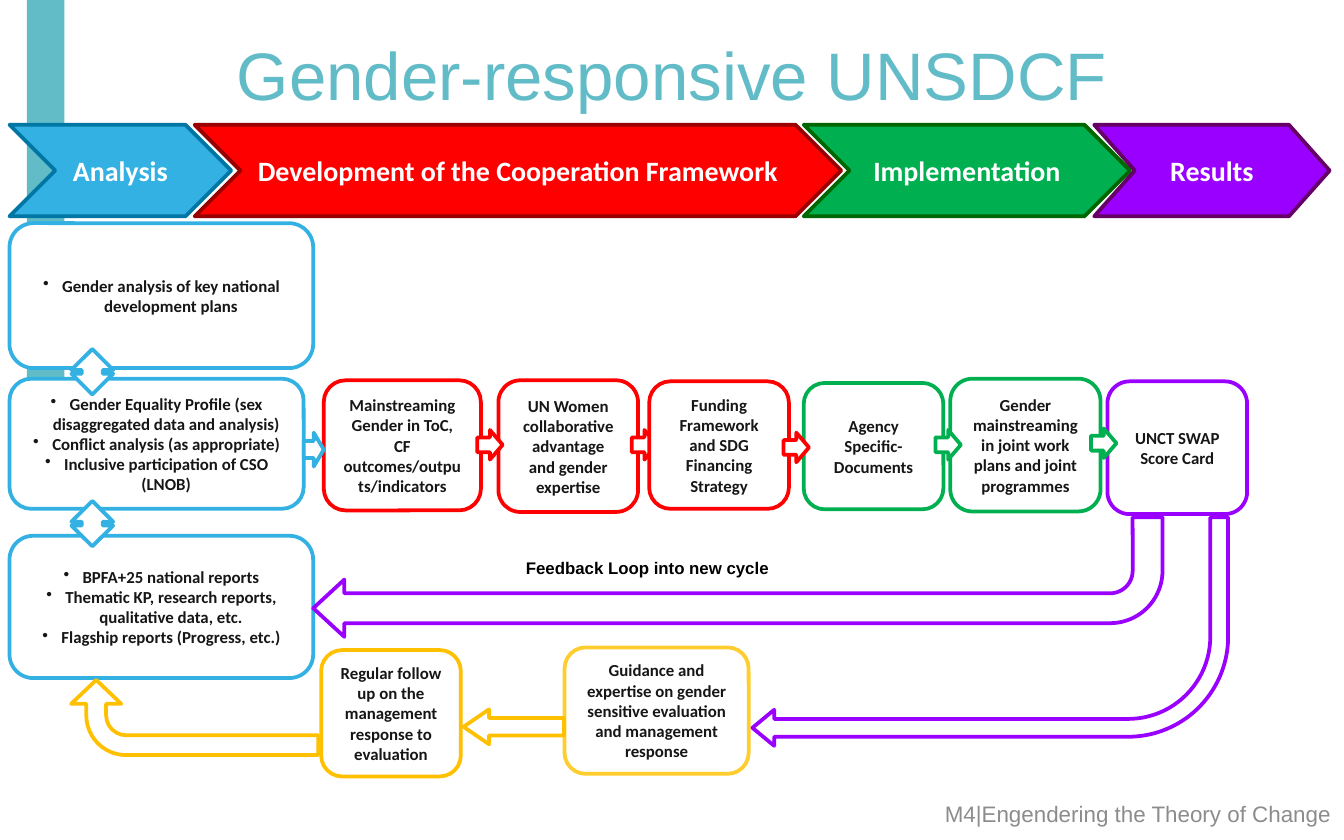
from dataclasses import dataclass

from lxml.etree import SubElement
from pptx import Presentation
from pptx.dml.color import RGBColor
from pptx.enum.shapes import MSO_AUTO_SHAPE_TYPE as Shape
from pptx.enum.text import MSO_VERTICAL_ANCHOR as Anchor, PP_PARAGRAPH_ALIGNMENT as Align
from pptx.oxml.ns import qn
from pptx.util import Cm, Pt


@dataclass(frozen=True)
class Theme:
    """Colours, fonts and sizes of the slide."""
    teal: str = "62BCC8"
    blue: str = "33B1E3"
    navy: str = "0076A5"
    red: str = "FF0000"
    maroon: str = "990000"
    green: str = "00B050"
    forest: str = "006600"
    purple: str = "9900FF"
    plum: str = "660066"
    amber: str = "FFC000"
    gold: str = "FFCD2D"
    white: str = "FFFFFF"
    black: str = "000000"
    ink: str = "161616"
    grey: str = "8C8C8C"
    heading_font: str = "Arial"
    body_font: str = "Calibri"
    title_size: float = 36
    phase_size: float = 15
    footer_size: float = 12
    body_size: float = 9
    line_width: float = 2


THEME = Theme()

PHASES = [
    ("Analysis", 0.18, 4.19, THEME.blue, THEME.navy, 0.5),
    ("Development of the Cooperation Framework", 3.68, 12.22, THEME.red, THEME.maroon, 0.5),
    ("Implementation", 15.19, 6.17, THEME.green, THEME.forest, 0.5),
    ("Results", 20.68, 4.45, THEME.purple, THEME.plum, 0.444),
]

ANALYSES = [
    ((0.18, 4.22, 5.74, 2.74), ["Gender analysis of key national development plans"]),
    ((0.18, 7.16, 5.56, 2.46), [
        "Gender Equality Profile (sex disaggregated data and analysis)",
        "Conflict analysis (as appropriate)",
        "Inclusive participation of CSO (LNOB)",
    ]),
    ((0.18, 10.13, 5.74, 2.69), [
        "BPFA+25 national reports",
        "Thematic KP, research reports, qualitative data, etc.",
        "Flagship reports (Progress, etc.)",
    ]),
]

STEPS = [
    ("Mainstreaming Gender in ToC, CF outcomes/outputs/indicators",
     (6.12, 7.19, 2.97, 2.46), THEME.red),
    ("UN Women collaborative advantage and gender expertise",
     (9.42, 7.19, 2.64, 2.49), THEME.red),
    ("Agency Specific-Documents", (15.19, 7.24, 2.64, 2.39), THEME.green),
    ("Gender mainstreaming in joint work plans and joint programmes",
     (17.96, 7.16, 2.84, 2.51), THEME.green),
    ("UNCT SWAP Score Card", (20.93, 7.21, 2.64, 2.51), THEME.purple),
    ("Regular follow up on the management response to evaluation",
     (6.07, 12.29, 2.64, 2.39), THEME.amber),
    ("Guidance and expertise on gender sensitive evaluation and management response",
     (10.67, 12.24, 3.48, 2.39), THEME.gold),
]
FUNDING = ("Funding Framework and SDG Financing Strategy", (12.27, 7.21, 2.64, 2.41), THEME.red)

HANDOVERS = [
    (9.02, 8.13, THEME.red),
    (11.94, 8.13, THEME.red),
    (17.68, 8.13, THEME.green),
    (20.62, 8.1, THEME.green),
]
FUNDING_HANDOVER = (14.81, 8.18, THEME.red)

LOOPS = [
    (Shape.BENT_ARROW, (5.92, 9.78, 16.05, 2.26), THEME.purple, 180, (0.25, 0.24, 0.26, 0.438)),
    (Shape.BENT_ARROW, (14.22, 9.78, 8.99, 4.32), THEME.purple, 180, (0.078, 0.079, 0.095, 0.438)),
    (Shape.RIGHT_ARROW, (8.76, 13.41, 1.9, 0.66), THEME.amber, 180, (0.5, 0.73)),
    (Shape.BENT_ARROW, (2.97, 11.23, 1.42, 4.67), THEME.amber, 270, (0.264, 0.334, 0.317, 0.531)),
]


def add_bullet(para):
    """Give a paragraph a hanging round bullet."""
    properties = para._p.get_or_add_pPr()
    properties.set("marL", str(Cm(0.36)))
    properties.set("indent", str(-Cm(0.36)))
    SubElement(properties, qn("a:buChar")).set("char", "•")


def write(box, lines, *, size=THEME.body_size, font=THEME.body_font, color=THEME.ink,
          bold=True, align=Align.CENTER, bullets=False):
    """Fill a box with one formatted paragraph per line."""
    frame = box.text_frame
    frame.word_wrap = True
    frame.vertical_anchor = Anchor.MIDDLE
    frame.margin_left = frame.margin_right = Cm(0.24)
    for index, line in enumerate(lines):
        para = frame.paragraphs[0] if index == 0 else frame.add_paragraph()
        para.alignment = align
        if bullets:
            add_bullet(para)
        span = para.add_run()
        span.text = line
        span.font.name = font
        span.font.size = Pt(size)
        span.font.bold = bold
        span.font.color.rgb = RGBColor.from_string(color)


def draw(page, kind, place, line=None, fill=THEME.white, rotation=0, adjustments=()):
    """Add a flat preset shape at a place in centimetres."""
    shape = page.shapes.add_shape(kind, *map(Cm, place))
    shape.shadow.inherit = False
    shape.rotation = rotation
    shape.fill.solid()
    shape.fill.fore_color.rgb = RGBColor.from_string(fill)
    if line:
        shape.line.color.rgb = RGBColor.from_string(line)
        shape.line.width = Pt(THEME.line_width)
    else:
        shape.line.fill.background()
    for index, value in enumerate(adjustments):
        shape.adjustments[index] = value
    return shape


def add_label(page, text, place, **style):
    """Add a free text box."""
    write(page.shapes.add_textbox(*map(Cm, place)), [text], font=THEME.heading_font, **style)


def add_phase(page, name, left, width, fill, line, point):
    """Add one chevron of the phase band."""
    chevron = draw(page, Shape.CHEVRON, (left, 2.36, width, 1.73), line, fill, adjustments=[point])
    write(chevron, [name], size=THEME.phase_size, color=THEME.white)


def add_card(page, lines, place, line, bullets=False):
    """Add a rounded card with text."""
    write(draw(page, Shape.ROUNDED_RECTANGLE, place, line), lines, bullets=bullets)


def add_handover(page, left, top, line):
    """Add a small arrow between two steps."""
    draw(page, Shape.RIGHT_ARROW, (left, top, 0.48, 0.56), line)


def main():
    """Build and save the slide."""
    deck = Presentation()
    deck.slide_width, deck.slide_height = Cm(25.4), Cm(15.88)
    page = deck.slides.add_slide(deck.slide_layouts[6])

    draw(page, Shape.RECTANGLE, (0.51, 0, 0.71, 7.85), fill=THEME.teal)
    for place, lines in ANALYSES:
        add_card(page, lines, place, THEME.blue, bullets=True)
    for text, place, color in STEPS:
        add_card(page, [text], place, color)
    for phase in PHASES:
        add_phase(page, *phase)

    for top in (6.6, 9.47):
        draw(page, Shape.UP_DOWN_ARROW, (1.35, top, 0.79, 0.86), THEME.blue)
    draw(page, Shape.RIGHT_ARROW, (5.74, 8.18, 0.38, 0.64), THEME.blue)
    for handover in HANDOVERS:
        add_handover(page, *handover)
    text, place, color = FUNDING
    add_card(page, [text], place, color)
    add_handover(page, *FUNDING_HANDOVER)
    for kind, place, color, rotation, adjustments in LOOPS:
        draw(page, kind, place, color, rotation=rotation, adjustments=adjustments)

    add_label(page, "Gender-responsive UNSDCF", (1.27, 0.08, 22.86, 2.64),
              size=THEME.title_size, color=THEME.teal, bold=False)
    add_label(page, "Feedback Loop into new cycle", (9.7, 10.41, 5.18, 0.64),
              color=THEME.black, align=Align.LEFT)
    add_label(page, "M4|Engendering the Theory of Change", (9.19, 14.86, 16.21, 1.04),
              size=THEME.footer_size, color=THEME.grey, bold=False, align=Align.RIGHT)
    deck.save("out.pptx")


if __name__ == "__main__":
    main()
